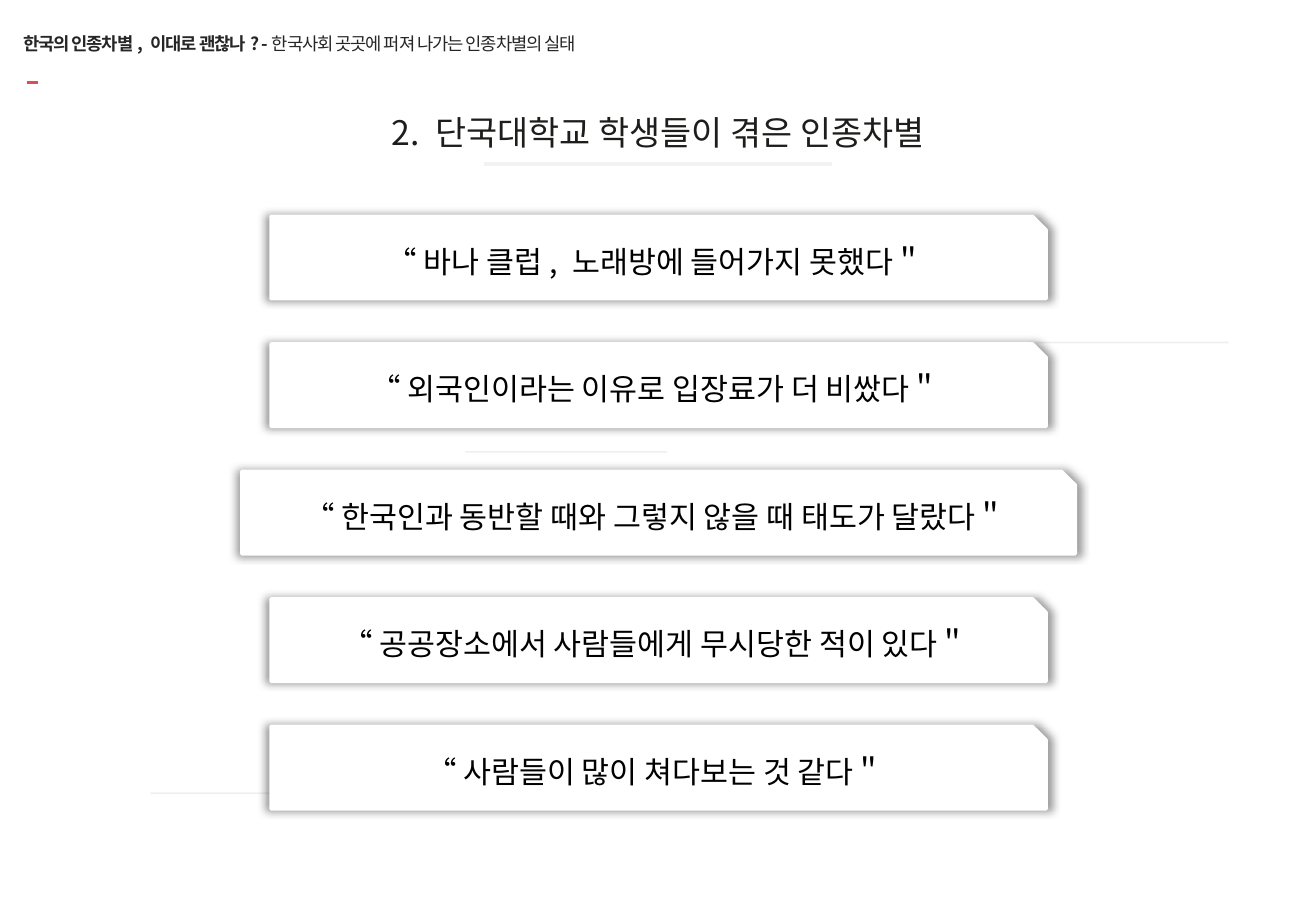
"""Build the slide listing discrimination met by students as five quote cards."""
from lxml.etree import SubElement
from pptx import Presentation
from pptx.dml.color import RGBColor
from pptx.enum.shapes import MSO_CONNECTOR as Connector, MSO_SHAPE as Shape
from pptx.enum.text import MSO_ANCHOR as Anchor, PP_ALIGN as Align
from pptx.oxml import parse_xml
from pptx.oxml.ns import nsdecls, qn
from pptx.util import Pt

PX = 9144
FONT = "Noto Sans CJK KR"
WHITE = RGBColor(0xFF, 0xFF, 0xFF)
BLACK = RGBColor(0, 0, 0)
INK = RGBColor(0x1D, 0x1D, 0x1B)
CHARCOAL = RGBColor(0x26, 0x26, 0x26)
RED = RGBColor(0xDA, 0x50, 0x54)
PALE = RGBColor(0xF2, 0xF2, 0xF2)
GREY = RGBColor(0xD9, 0xD9, 0xD9)


def add_span(para, text, size, color, bold=False):
    """Append a run set in the slide font."""
    span = para.add_run()
    span.text = text
    span.font.size = Pt(size)
    span.font.name = FONT
    span.font.bold = bold
    span.font.color.rgb = color
    SubElement(span.font._element, qn("a:ea")).set("typeface", FONT)
    return span


def add_rule(left, right, y, color, width, opacity=100):
    """Draw a horizontal line without shadow."""
    rule = page.shapes.add_connector(Connector.STRAIGHT, left * PX, y * PX, right * PX, y * PX)
    rule.line.color.rgb = color
    rule.line.width = Pt(width)
    if opacity < 100:
        tint = rule.line._ln.find(".//" + qn("a:srgbClr"))
        SubElement(tint, qn("a:alpha")).set("val", str(opacity * 1000))
    SubElement(rule._element.spPr, qn("a:effectLst"))


deck = Presentation()
deck.slide_width, deck.slide_height = 1083 * PX, 750 * PX
page = deck.slides.add_slide(deck.slide_layouts[5])

title = page.shapes.title
title.left, title.top, title.width, title.height = 19 * PX, 12 * PX, 872 * PX, 47 * PX
frame = title.text_frame
frame.margin_left = frame.margin_right = frame.margin_top = frame.margin_bottom = 0
frame.vertical_anchor = Anchor.MIDDLE
frame.word_wrap = True
para = frame.paragraphs[0]
para.alignment = Align.LEFT
for text, bold in (
    ("한국의 인종차별, 이대로 괜찮나? -", True),
    ("한국사회 곳곳에 퍼져 나가는 인종차별의 실태", False),
):
    span = add_span(para, text, 10.5, CHARCOAL, bold)
    span.font._element.set("spc", "-60")

add_rule(22, 31, 68, RED, 2)
add_rule(398, 685, 135, PALE, 2.25)
for left, right, y in ((847, 1011, 282), (383, 549, 372), (124, 291, 653)):
    add_rule(left, right, y, GREY, 1, 40)

heading = page.shapes.add_textbox(144 * PX, 90 * PX, 795 * PX, 38 * PX)
frame = heading.text_frame
frame.word_wrap = True
frame.vertical_anchor = Anchor.MIDDLE
para = frame.paragraphs[0]
para.alignment = Align.CENTER
para.space_after = Pt(3)
add_span(para, "2. 단국대학교 학생들이 겪은 인종차별", 20, INK)

CARD_CENTER, CARD_TOP, CARD_HEIGHT, CARD_STEP = 542, 178, 68, 105
quotes = (
    ("“ 바나 클럽, 노래방에 들어가지 못했다＂", 638),
    ("“ 외국인이라는 이유로 입장료가 더 비쌌다＂", 638),
    ("“ 한국인과 동반할 때와 그렇지 않을 때 태도가 달랐다＂", 686),
    ("“ 공공장소에서 사람들에게 무시당한 적이 있다＂", 638),
    ("“ 사람들이 많이 쳐다보는 것 같다＂", 638),
)
for index, (quote, width) in enumerate(quotes):
    left = CARD_CENTER - width // 2
    top = CARD_TOP + index * CARD_STEP
    card = page.shapes.add_shape(
        Shape.SNIP_1_RECTANGLE, left * PX, top * PX, width * PX, CARD_HEIGHT * PX)
    card.fill.solid()
    card.fill.fore_color.rgb = WHITE
    card.line.color.rgb = WHITE
    card.line.width = Pt(2)
    card._element.spPr.append(parse_xml(
        f'<a:effectLst {nsdecls("a")}><a:outerShdw blurRad="63500" sx="101000" sy="101000" '
        'algn="ctr" rotWithShape="0"><a:srgbClr val="000000"><a:alpha val="40000"/>'
        '</a:srgbClr></a:outerShdw></a:effectLst>'))
    frame = card.text_frame
    frame.word_wrap = True
    frame.vertical_anchor = Anchor.MIDDLE
    para = frame.paragraphs[0]
    para.alignment = Align.CENTER
    add_span(para, quote, 18, BLACK)

deck.save("out.pptx")
